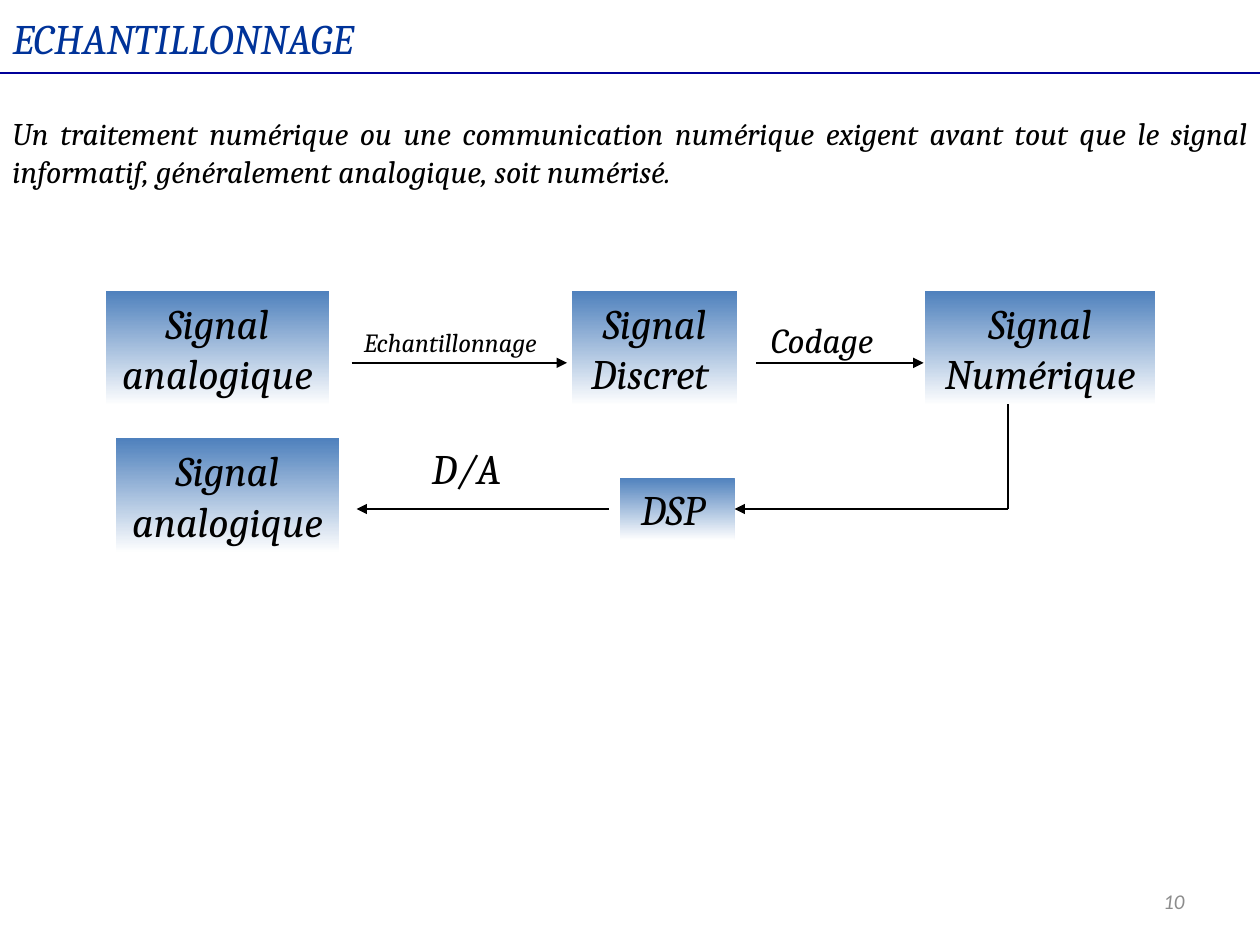
"""Build the slide on sampling: the chain from analogue signal to DSP and back."""
import dataclasses

import lxml.etree
import pptx
import pptx.dml.color
import pptx.enum.shapes
import pptx.enum.text
import pptx.oxml.ns
import pptx.util
from pptx.util import Inches

Color = pptx.dml.color.RGBColor
Align = pptx.enum.text.PP_ALIGN
Anchor = pptx.enum.text.MSO_ANCHOR


@dataclasses.dataclass(frozen=True)
class Theme:
    font: str = "Cambria"
    number_font: str = "Calibri"
    ink: str = "000000"
    title: str = "003399"
    rule: str = "000099"
    block_top: str = "4F81BD"
    block_bottom: str = "FFFFFF"
    number: str = "8C8C8C"
    large: int = 24
    medium: int = 20
    body: int = 18
    small: int = 15
    tiny: int = 12
    line: float = 0.75


theme = Theme()


def write(shape, text, size, color=theme.ink, align=Align.LEFT, wrap=True,
          font=theme.font, anchor=Anchor.TOP):
    frame = shape.text_frame
    frame.text = text
    frame.word_wrap = wrap
    frame.auto_size = pptx.enum.text.MSO_AUTO_SIZE.NONE
    frame.vertical_anchor = anchor
    for paragraph in frame.paragraphs:
        paragraph.alignment = align
        paragraph.font.name = font
        paragraph.font.size = pptx.util.Pt(size)
        paragraph.font.italic = True
        paragraph.font.color.rgb = Color.from_string(color)


def connect(start, end, color=theme.ink, arrow=True):
    connector = slide.shapes.add_connector(
        pptx.enum.shapes.MSO_CONNECTOR.STRAIGHT, *map(Inches, start + end))
    connector.line.color.rgb = Color.from_string(color)
    connector.line.width = pptx.util.Pt(theme.line)
    if arrow:
        lxml.etree.SubElement(connector.line._get_or_add_ln(),
                              pptx.oxml.ns.qn("a:tailEnd"), type="triangle")
    lxml.etree.SubElement(connector._element.spPr, pptx.oxml.ns.qn("a:effectLst"))
    return connector


presentation = pptx.Presentation()
presentation.slide_width = Inches(10)
presentation.slide_height = Inches(7.5)
slide = presentation.slides.add_slide(presentation.slide_layouts[5])

title = slide.shapes.title
title.left, title.top = Inches(0), Inches(0.05)
title.width, title.height = Inches(3.74), Inches(0.5)
write(title, "ECHANTILLONNAGE", theme.large, theme.title)
connect((0, 0.58), (10, 0.58), theme.rule, arrow=False)

introduction = slide.shapes.add_textbox(Inches(0), Inches(0.86), Inches(10), Inches(4.04))
write(introduction,
      "Un traitement numérique ou une communication numérique exigent avant tout "
      "que le signal informatif, généralement analogique, soit numérisé.",
      theme.body, align=Align.JUSTIFY)

blocks = {}
for text, left, top, width, height in [
    ("Signal\nanalogique", 0.84, 2.31, 1.77, 0.91),
    ("Signal\nDiscret ", 4.54, 2.31, 1.31, 0.91),
    ("Signal\nNumérique", 7.34, 2.31, 1.83, 0.91),
    ("Signal\nanalogique", 0.92, 3.48, 1.77, 0.91),
    ("DSP ", 4.92, 3.79, 0.91, 0.5),
]:
    block = slide.shapes.add_shape(
        pptx.enum.shapes.MSO_SHAPE.RECTANGLE,
        Inches(left), Inches(top), Inches(width), Inches(height))
    block.shadow.inherit = False
    block.line.fill.background()
    block.fill.gradient()
    block.fill.gradient_angle = 270
    for stop, color, position in zip(block.fill.gradient_stops,
                                     (theme.block_top, theme.block_bottom), (0, 1)):
        stop.color.rgb = Color.from_string(color)
        stop.position = position
    write(block, text, theme.large, align=Align.CENTER, wrap=False)
    blocks[text.strip()] = block

upper, lower = 2.88, 4.04
connect((2.79, upper), (4.5, upper))
connect((6, upper), (7.33, upper))
connect((8, 3.21), (8, lower), arrow=False)
connect((8, lower), (5.83, lower)).end_connect(blocks["DSP"], 3)
connect((4.83, lower), (2.83, lower))

labels = {}
for text, size, left, top, width, height, wrap in [
    ("Echantillonnage", theme.small, 2.79, 2.54, 1.66, 0.35, False),
    ("Codage", theme.medium, 6.02, 2.42, 1.48, 0.5, True),
    ("D/A", theme.large, 3.33, 3.46, 0.78, 0.5, False),
]:
    label = slide.shapes.add_textbox(Inches(left), Inches(top), Inches(width), Inches(height))
    write(label, text, size, wrap=wrap)
    labels[text] = label

spacer = labels["Codage"].text_frame.paragraphs[0].add_run()
spacer.text = " "
spacer.font.size = pptx.util.Pt(theme.large)

number = slide.shapes.add_textbox(Inches(7.17), Inches(6.95), Inches(2.33), Inches(0.4))
write(number, "10", theme.tiny, theme.number, Align.RIGHT,
      font=theme.number_font, anchor=Anchor.MIDDLE)

presentation.save("out.pptx")
